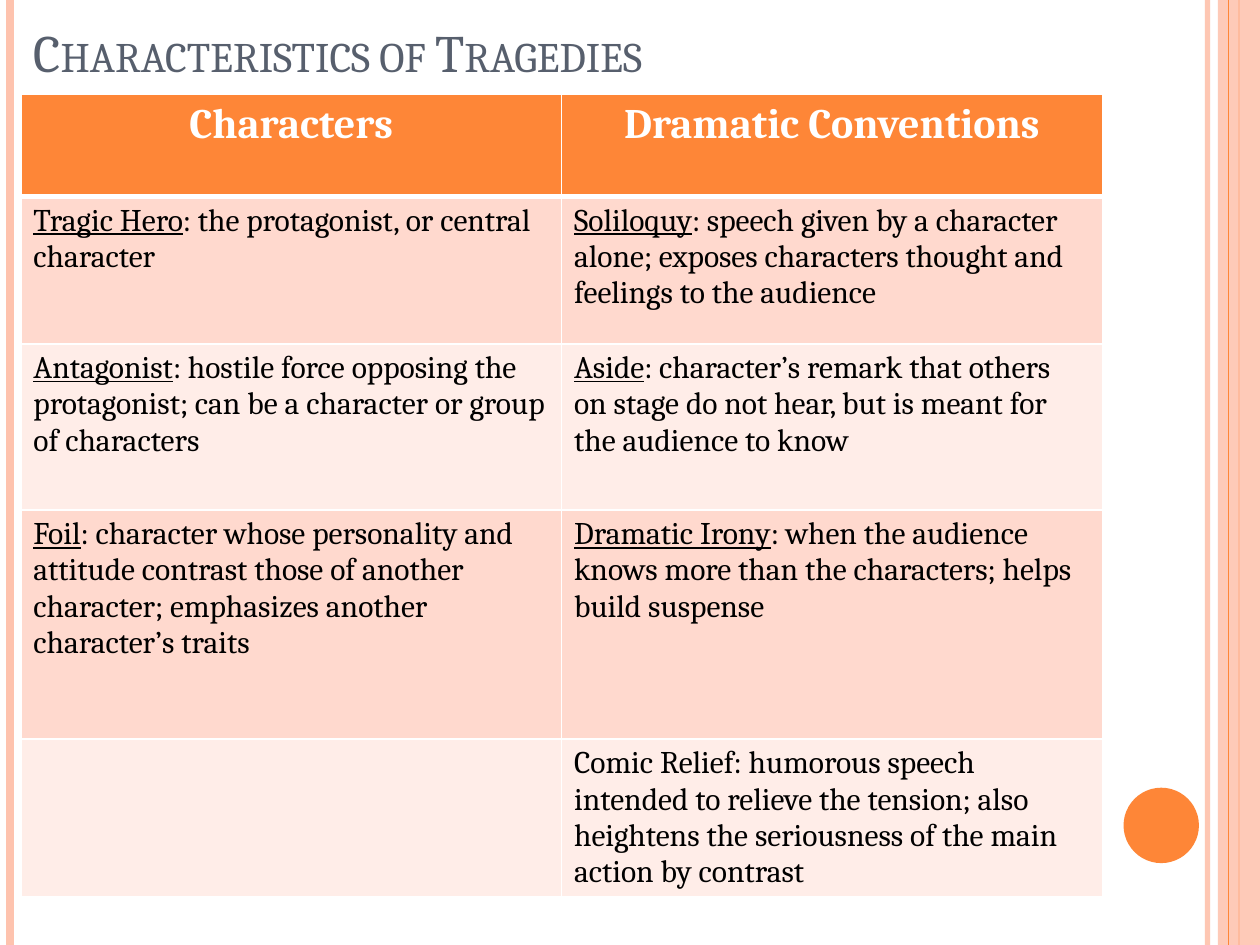
import pptx
import pptx.util
import pptx.dml.color
import pptx.enum.shapes
import pptx.enum.text
import pptx.oxml
import pptx.oxml.ns
from lxml import etree

Cm = pptx.util.Cm
Pt = pptx.util.Pt
RGBColor = pptx.dml.color.RGBColor
Shapes = pptx.enum.shapes.MSO_SHAPE
Align = pptx.enum.text.PP_ALIGN
Anchor = pptx.enum.text.MSO_ANCHOR
qn = pptx.oxml.ns.qn

ORANGE = RGBColor(0xFE, 0x86, 0x37)
PEACH = RGBColor(0xFE, 0xC3, 0xAE)
SLATE = RGBColor(0x57, 0x5F, 0x6D)
BAND_DARK = RGBColor(0xFF, 0xD9, 0xCE)
BAND_LIGHT = RGBColor(0xFF, 0xED, 0xE8)
WHITE = RGBColor(0xFF, 0xFF, 0xFF)
BLACK = RGBColor(0, 0, 0)

SLIDE_HEIGHT = 19.05
COLUMN_WIDTHS = [10.9, 10.9]
ROW_HEIGHTS = [2.06, 2.97, 3.35, 4.62, 2.9]
HEADINGS = ["Characters", "Dramatic Conventions"]
DEFINITIONS = [
    [("Tragic Hero", ": the protagonist, or central character"),
     ("Soliloquy", ": speech given by a character alone; exposes characters thought "
                   "and feelings to the audience")],
    [("Antagonist", ": hostile force opposing the protagonist; can be a character "
                    "or group of characters"),
     ("Aside", ": character’s remark that others on stage do not hear, but is meant "
               "for the audience to know")],
    [("Foil", ": character whose personality and attitude contrast those of another "
              "character; emphasizes another character’s traits"),
     ("Dramatic Irony", ": when the audience knows more than the characters; helps "
                        "build suspense")],
    [("", ""),
     ("", "Comic Relief: humorous speech intended to relieve the tension; also "
          "heightens the seriousness of the main action by contrast")],
]


class SlideBuilder:
    title_format = {"name": "Cambria", "size": Pt(30), "bold": False}
    heading_format = {"name": "Cambria", "size": Pt(24), "bold": True}
    body_format = {"name": "Cambria", "size": Pt(18), "bold": False}
    term_format = {**body_format, "underline": True}

    def __init__(self, slide):
        self.slide = slide

    def add_run(self, paragraph, text, font_format, color):
        run = paragraph.add_run()
        run.text = text
        for attribute, value in font_format.items():
            setattr(run.font, attribute, value)
        run.font.color.rgb = color
        return run

    def set_opacity(self, fill, color, percent):
        fill.solid()
        fill.fore_color.rgb = color
        if percent < 100:
            element = fill._xPr.find(qn("a:solidFill"))[0]
            etree.SubElement(element, qn("a:alpha")).set("val", str(percent * 1000))

    def title(self, text, left, top, width, height):
        shape = self.slide.shapes.title
        place = {"left": left, "top": top, "width": width, "height": height}
        for attribute, value in place.items():
            setattr(shape, attribute, Cm(value))
        frame = shape.text_frame
        frame.vertical_anchor = Anchor.BOTTOM
        frame.auto_size = pptx.enum.text.MSO_AUTO_SIZE.NONE
        paragraph = frame.paragraphs[0]
        paragraph.alignment = Align.LEFT
        run = self.add_run(paragraph, text, self.title_format, SLATE)
        run._r.get_or_add_rPr().set("cap", "small")

    def stripe(self, x, color, weight, opacity=100):
        connector = self.slide.shapes.add_connector(
            pptx.enum.shapes.MSO_CONNECTOR.STRAIGHT, Cm(x), 0, Cm(x), Cm(SLIDE_HEIGHT))
        connector.line.width = Pt(weight)
        self.set_opacity(connector.line.fill, color, opacity)
        etree.SubElement(connector._element.spPr, qn("a:effectLst"))

    def shape(self, kind, left, top, width, height, color, opacity=100):
        shape = self.slide.shapes.add_shape(kind, Cm(left), Cm(top), Cm(width), Cm(height))
        shape.shadow.inherit = False
        shape.line.fill.background()
        self.set_opacity(shape.fill, color, opacity)

    def style_cell(self, cell, color, top, bottom):
        properties = cell._tc.get_or_add_tcPr()
        for side, weight in {"L": 1, "R": 1, "T": top, "B": bottom}.items():
            properties.append(pptx.oxml.parse_xml(
                f'<a:ln{side} {pptx.oxml.ns.nsdecls("a")} w="{Pt(weight)}">'
                f'<a:solidFill><a:srgbClr val="{WHITE}"/></a:solidFill></a:ln{side}>'))
        cell.fill.solid()
        cell.fill.fore_color.rgb = color

    def table(self, left, top):
        table = self.slide.shapes.add_table(
            len(ROW_HEIGHTS), len(COLUMN_WIDTHS), Cm(left), Cm(top),
            Cm(sum(COLUMN_WIDTHS)), Cm(sum(ROW_HEIGHTS))).table
        for column, width in zip(table.columns, COLUMN_WIDTHS):
            column.width = Cm(width)
        for row, height in zip(table.rows, ROW_HEIGHTS):
            row.height = Cm(height)
        for cell, heading in zip(table.rows[0].cells, HEADINGS):
            self.style_cell(cell, ORANGE, 1, 3)
            paragraph = cell.text_frame.paragraphs[0]
            paragraph.alignment = Align.CENTER
            self.add_run(paragraph, heading, self.heading_format, WHITE)
        for number, definitions in enumerate(DEFINITIONS, 1):
            band = BAND_DARK if number % 2 else BAND_LIGHT
            for cell, (term, meaning) in zip(table.rows[number].cells, definitions):
                self.style_cell(cell, band, 3 if number == 1 else 1, 1)
                paragraph = cell.text_frame.paragraphs[0]
                for text, font_format in ((term, self.term_format),
                                          (meaning, self.body_format)):
                    if text:
                        self.add_run(paragraph, text, font_format, BLACK)


def main():
    presentation = pptx.Presentation()
    presentation.slide_width = Cm(25.4)
    presentation.slide_height = Cm(SLIDE_HEIGHT)
    builder = SlideBuilder(presentation.slides.add_slide(presentation.slide_layouts[5]))
    builder.stripe(24.34, PEACH, 3, 93)
    builder.stripe(0.21, PEACH, 4.5)
    builder.stripe(24.98, ORANGE, 1.5)
    builder.shape(Shapes.RECTANGLE, 24.55, 0, 0.85, SLIDE_HEIGHT, PEACH, 87)
    builder.stripe(24.77, ORANGE, 0.75)
    builder.shape(Shapes.OVAL, 22.65, 15.88, 1.52, 1.52, ORANGE)
    builder.title("Characteristics of Tragedies", 0.42, 0.21, 20.75, 1.6)
    builder.table(0.42, 1.9)
    presentation.save("out.pptx")


if __name__ == "__main__":
    main()
